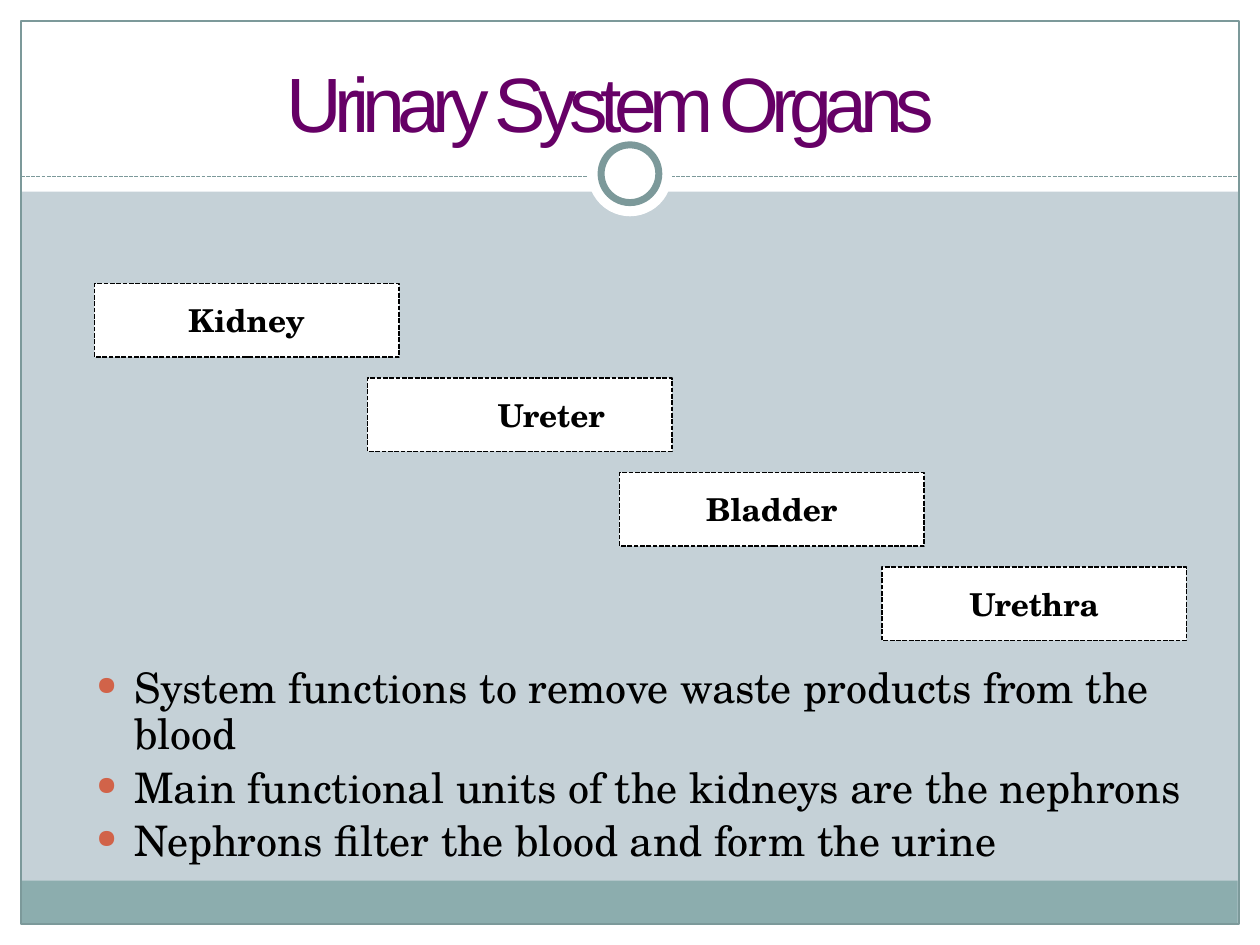
from lxml.etree import SubElement
from pptx import Presentation
from pptx.dml.color import RGBColor
from pptx.enum.dml import MSO_LINE
from pptx.enum.shapes import MSO_CONNECTOR, MSO_SHAPE
from pptx.enum.text import MSO_ANCHOR, PP_ALIGN
from pptx.oxml.ns import qn
from pptx.util import Pt

SERIF = "TeX Gyre Schola"
TEAL = "7C999A"
WHITE = "FFFFFF"
BLACK = "000000"


def color(code):
    return RGBColor.from_string(code)


def write(para, text, name, size, code, bold=False):
    """Add a styled run to the paragraph and return it."""
    run = para.add_run()
    run.text = text
    looks = {"name": name, "size": Pt(size), "bold": bold}
    for key, value in looks.items():
        setattr(run.font, key, value)
    run.font.color.rgb = color(code)
    return run


deck = Presentation()
deck.slide_width, deck.slide_height = Pt(720), Pt(540)
slide = deck.slides.add_slide(deck.slide_layouts[6])
slide.background.fill.solid()
slide.background.fill.fore_color.rgb = color("C5D1D7")
shapes = slide.shapes

# White margins, footer band, outer frame, divider and ring
RECT, OVAL = MSO_SHAPE.RECTANGLE, MSO_SHAPE.OVAL
LINE = MSO_CONNECTOR.STRAIGHT
frame = [
    (RECT, (0, 528, 720, 12), WHITE, None),
    (RECT, (0, 0, 720, 109.5), WHITE, None),
    (RECT, (0, 0, 12, 540), WHITE, None),
    (RECT, (708, 0, 12, 540), WHITE, None),
    (RECT, (11.75, 503.25, 695.5, 24.5), "8CADAE", None),
    (RECT, (12, 12, 696, 516), None, 0.75),
    (LINE, (12, 100.8, 708, 100.8), None, 0.75),
    (OVAL, (336, 75.6, 48, 48), WHITE, None),
    (OVAL, (343.5, 82.8, 33, 33), WHITE, 4),
]
for kind, box, fill, width in frame:
    if kind is LINE:
        part = shapes.add_connector(kind, *map(Pt, box))
        part.line.dash_style = MSO_LINE.SQUARE_DOT
    else:
        part = shapes.add_shape(kind, *map(Pt, box))
        part.shadow.inherit = False
        if fill:
            part.fill.solid()
            part.fill.fore_color.rgb = color(fill)
        else:
            part.fill.background()
    if width:
        part.line.color.rgb = color(TEAL)
        part.line.width = Pt(width)
    else:
        part.line.fill.background()
    if kind is LINE:
        SubElement(part.element.spPr, qn("a:effectLst"))

# Function list
body = shapes.add_textbox(Pt(48), Pt(378), Pt(648), Pt(122.4)).text_frame
body.word_wrap = True
facts = [
    "System functions to remove waste products from the blood",
    "Main functional units of the kidneys are the nephrons",
    "Nephrons filter the blood and form the urine",
]
for i, fact in enumerate(facts):
    para = body.add_paragraph() if i else body.paragraphs[0]
    para.line_spacing = 0.9
    para.space_before = Pt(4.8)
    write(para, fact, SERIF, 24, BLACK)
    props = para._p.get_or_add_pPr()
    props.set("marL", str(Pt(21.6)))
    props.set("indent", str(-Pt(21.6)))
    tint = SubElement(props, qn("a:buClr"))
    SubElement(tint, qn("a:srgbClr"), val="D16349")
    SubElement(props, qn("a:buSzPct"), val="62000")
    SubElement(props, qn("a:buChar"), char="●")

# Title, in a box wide enough for one line
title = shapes.add_textbox(Pt(108.75), Pt(28), Pt(480), Pt(52.5)).text_frame
title.word_wrap = False
para = title.paragraphs[0]
para.alignment = PP_ALIGN.CENTER
run = write(para, "Urinary System Organs", "Arial", 44, "660066")
run.font._element.set("spc", "-440")

# Organ steps: name, left edge, extra left inset
organs = [("Kidney", 54, 0), ("Ureter", 210, 36),
          ("Bladder", 354, 0), ("Urethra", 504, 0)]
for i, (name, left, inset) in enumerate(organs):
    step = shapes.add_shape(RECT, Pt(left), Pt(162 + 54 * i), Pt(174), Pt(42))
    step.shadow.inherit = False
    step.fill.solid()
    step.fill.fore_color.rgb = color(WHITE)
    step.line.color.rgb = color(BLACK)
    step.line.width = Pt(0.9)
    step.line.dash_style = MSO_LINE.SQUARE_DOT
    text = step.text_frame
    text.margin_left = Pt(7.2 + inset)
    text.vertical_anchor = MSO_ANCHOR.MIDDLE
    para = text.paragraphs[0]
    para.alignment = PP_ALIGN.CENTER
    write(para, name, SERIF, 18, BLACK, True)

deck.save("out.pptx")
